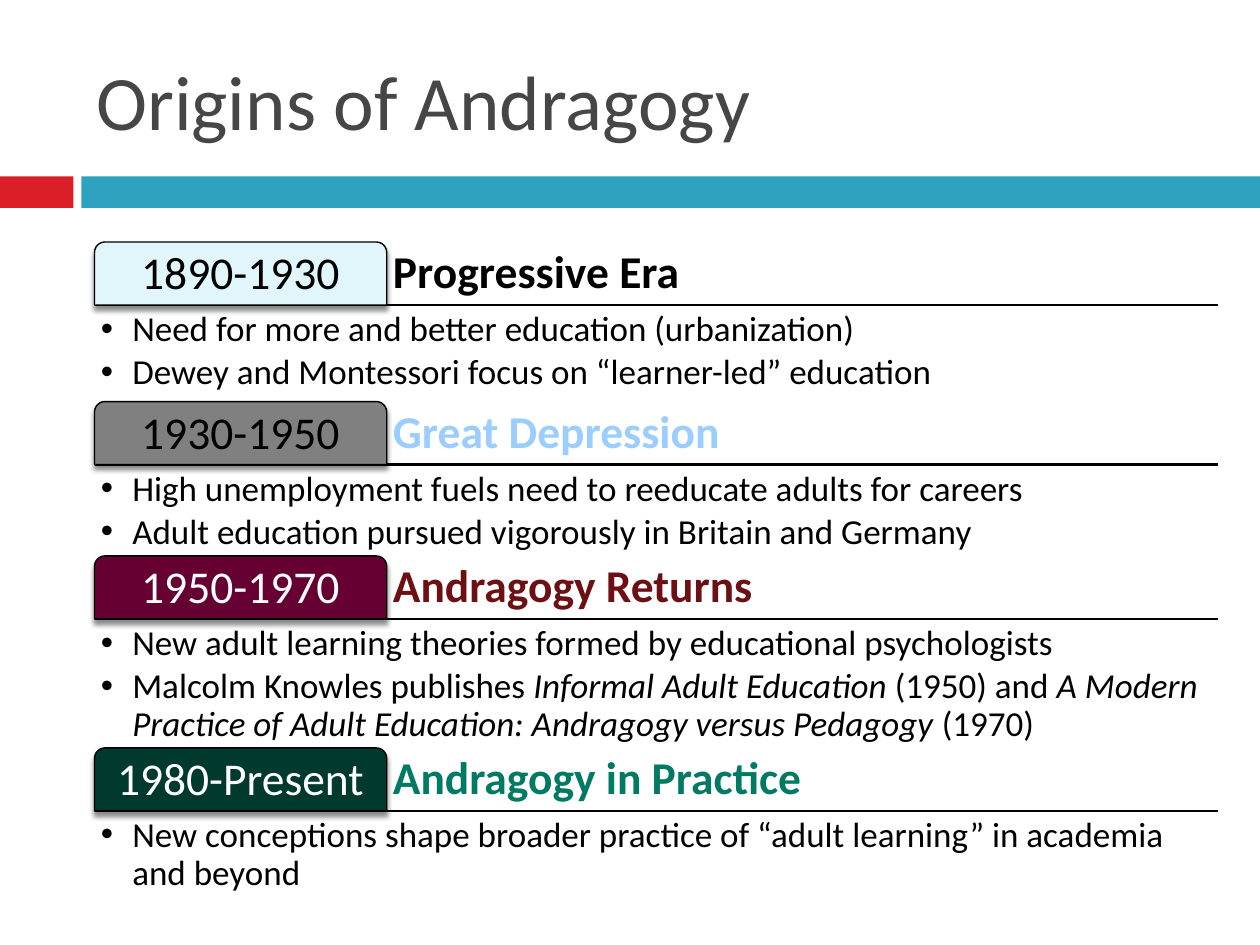
from collections import namedtuple
from dataclasses import dataclass

from lxml.etree import SubElement
from pptx import Presentation
from pptx.dml.color import RGBColor
from pptx.enum.shapes import MSO_CONNECTOR as Connector, MSO_SHAPE as Shape
from pptx.enum.text import MSO_ANCHOR as Anchor, PP_ALIGN as Align
from pptx.oxml.ns import qn
from pptx.util import Pt


@dataclass(frozen=True)
class Theme:
    font: str = "Calibri"
    title_size: float = 44
    heading_size: float = 26
    bullet_size: float = 20
    title: str = "464646"
    ink: str = "000000"
    accent: str = "DA1F28"
    band: str = "2DA2BF"


THEME = Theme()
LEFT, WIDTH = 54, 642.2
TAB_WIDTH, TAB_HEIGHT = 167, 36
INSET = 3.6

Era = namedtuple("Era", "top body_height years tab_fill years_color heading heading_color bullets")
ERAS = [
    Era(138.3, 54, "1890-1930", "E0F6FA", "000000", "Progressive Era", "000000", [
        "Need for more and better education (urbanization)",
        "Dewey and Montessori focus on “learner-led” education"]),
    Era(229.5, 51, "1930-1950", "808080", "000000", "Great Depression", "9BCDFF", [
        "High unemployment fuels need to reeducate adults for careers",
        "Adult education pursued vigorously in Britain and Germany"]),
    Era(317.7, 71, "1950-1970", "660033", "FFFFFF", "Andragogy Returns", "6D1014", [
        "New adult learning theories formed by educational psychologists",
        "Malcolm Knowles publishes _Informal Adult Education_ (1950) and "
        "_A Modern Practice of Adult Education: Andragogy versus Pedagogy_ (1970)"]),
    Era(427.4, 59, "1980-Present", "003A2F", "FFFFFF", "Andragogy in Practice", "007A63", [
        "New conceptions shape broader practice of “adult learning” in academia and beyond"]),
]


def apply(target, values):
    for name, value in values.items():
        setattr(target, name, value)


def set_frame(frame, anchor, inset):
    apply(frame, {"word_wrap": True, "vertical_anchor": anchor})
    if inset is not None:
        sides = ("left", "top", "right", "bottom")
        apply(frame, {f"margin_{side}": Pt(inset) for side in sides})


def add_run(paragraph, text, size, color, **style):
    run = paragraph.add_run()
    run.text = text
    apply(run.font, {"name": THEME.font, "size": Pt(size), **style})
    run.font.color.rgb = RGBColor.from_string(color)


def add_textbox(slide, left, top, width, height, anchor, inset=INSET):
    box = slide.shapes.add_textbox(Pt(left), Pt(top), Pt(width), Pt(height))
    set_frame(box.text_frame, anchor, inset)
    return box.text_frame


def add_block(slide, kind, left, top, width, height, fill):
    block = slide.shapes.add_shape(kind, Pt(left), Pt(top), Pt(width), Pt(height))
    block.shadow.inherit = False
    block.fill.solid()
    block.fill.fore_color.rgb = RGBColor.from_string(fill)
    block.line.fill.background()
    return block


def add_rule(slide, y):
    rule = slide.shapes.add_connector(
        Connector.STRAIGHT, Pt(LEFT), Pt(y), Pt(LEFT + WIDTH), Pt(y))
    rule.line.color.rgb = RGBColor.from_string(THEME.ink)
    rule.line.width = Pt(1.5)
    SubElement(rule._element.spPr, qn("a:effectLst"))


def add_drop_shadow(block):
    effects = block._element.spPr.find(qn("a:effectLst"))
    shadow = SubElement(effects, qn("a:outerShdw"), blurRad=str(Pt(3)),
                        dist=str(Pt(2.4)), dir="5400000", rotWithShape="0")
    color = SubElement(shadow, qn("a:srgbClr"), val=THEME.ink)
    SubElement(color, qn("a:alpha"), val="45000")


def add_tab(slide, era):
    tab = add_block(slide, Shape.ROUND_2_SAME_RECTANGLE, LEFT, era.top,
                    TAB_WIDTH, TAB_HEIGHT, era.tab_fill)
    tab.line.color.rgb = RGBColor.from_string(THEME.ink)
    tab.line.width = Pt(0.79)
    add_drop_shadow(tab)
    set_frame(tab.text_frame, Anchor.MIDDLE, INSET)
    years = tab.text_frame.paragraphs[0]
    apply(years, {"alignment": Align.CENTER, "line_spacing": 0.9})
    add_run(years, era.years, THEME.heading_size, era.years_color)


def add_heading(slide, era):
    frame = add_textbox(slide, LEFT + TAB_WIDTH, era.top, WIDTH - TAB_WIDTH,
                        TAB_HEIGHT, Anchor.BOTTOM)
    heading = frame.paragraphs[0]
    heading.line_spacing = 0.9
    add_run(heading, era.heading, THEME.heading_size, era.heading_color, bold=True)


def add_bullets(slide, era):
    frame = add_textbox(slide, LEFT, era.top + TAB_HEIGHT, WIDTH,
                        era.body_height, Anchor.TOP)
    for index, text in enumerate(era.bullets):
        bullet = frame.add_paragraph() if index else frame.paragraphs[0]
        apply(bullet, {"level": 1, "line_spacing": 0.9, "space_after": Pt(3)})
        properties = bullet._p.get_or_add_pPr()
        properties.set("marL", str(Pt(18)))
        properties.set("indent", str(Pt(-18)))
        SubElement(properties, qn("a:buFont"), typeface="Arial")
        SubElement(properties, qn("a:buChar"), char="•")
        for part, words in enumerate(text.split("_")):
            add_run(bullet, words, THEME.bullet_size, THEME.ink, italic=part % 2 == 1)


def add_title(slide, text):
    add_block(slide, Shape.RECTANGLE, 0, 100.8, 42, 18, THEME.accent)
    add_block(slide, Shape.RECTANGLE, 46.5, 100.8, 673.5, 18, THEME.band)
    frame = add_textbox(slide, 48, 18, 642, 78, Anchor.MIDDLE, inset=None)
    add_run(frame.paragraphs[0], text, THEME.title_size, THEME.title)


def main():
    deck = Presentation()
    apply(deck, {"slide_width": Pt(720), "slide_height": Pt(540)})
    slide = deck.slides.add_slide(deck.slide_layouts[6])
    add_title(slide, "Origins of Andragogy")
    for era in ERAS:
        add_rule(slide, era.top + TAB_HEIGHT)
    for era in ERAS:
        add_heading(slide, era)
        add_tab(slide, era)
        add_bullets(slide, era)
    deck.save("out.pptx")


if __name__ == "__main__":
    main()
